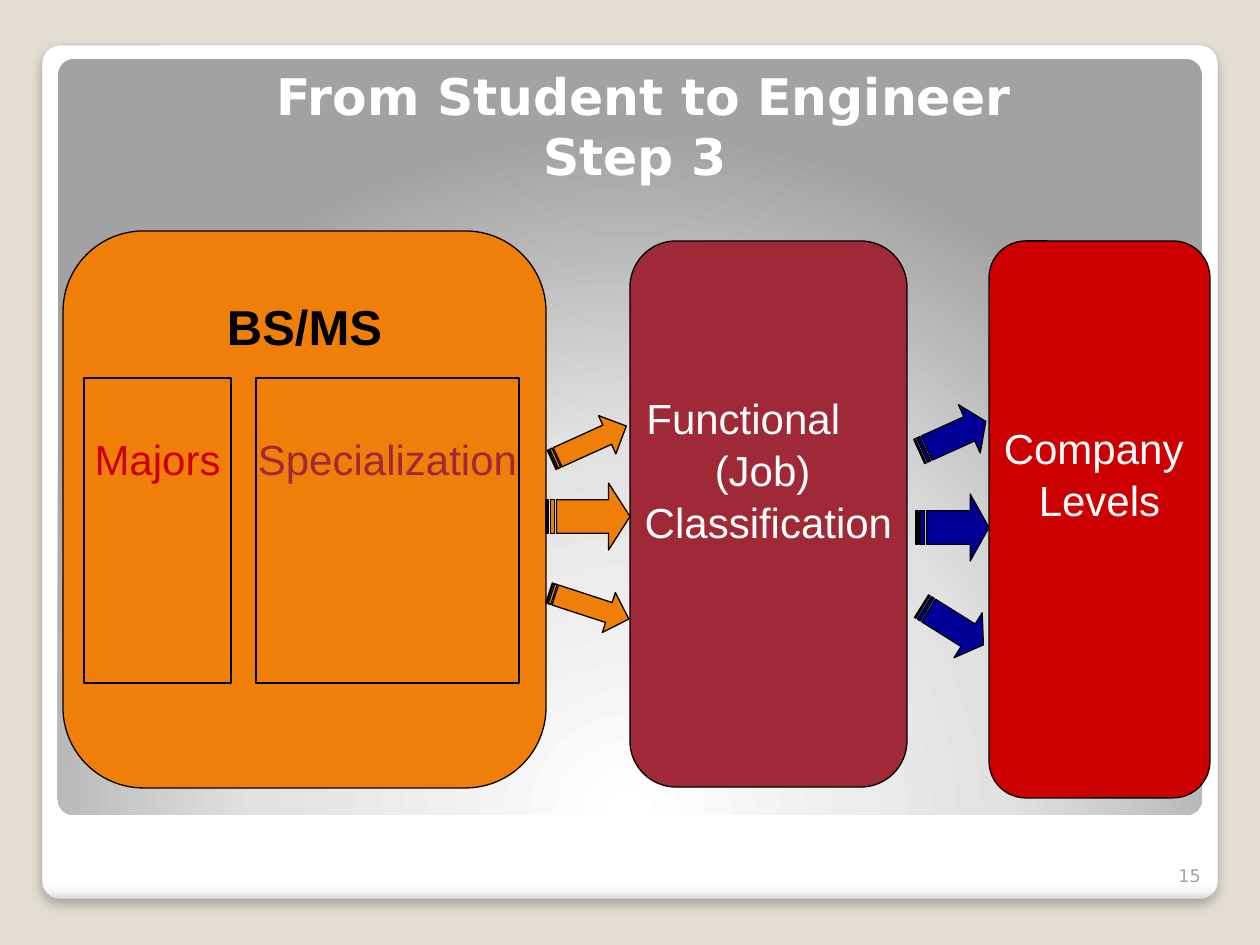
from pptx import Presentation
from pptx.dml.color import RGBColor
from pptx.enum.shapes import MSO_SHAPE as SHAPE
from pptx.enum.text import MSO_ANCHOR as ANCHOR, MSO_AUTO_SIZE as AUTO, PP_ALIGN as ALIGN
from pptx.oxml import parse_xml
from pptx.oxml.ns import nsdecls
from pptx.util import Emu, Pt

PX_PER_INCH = 126
COLORS = {
    "page": "E3DED1", "white": "FFFFFF", "black": "000000", "edge": "A4A4A4",
    "number": "A8A49B", "orange": "F07F09", "maroon": "9F2936",
    "red": "CC0000", "navy": "000099",
}


def px(n):
    return Emu(round(n * 914400 / PX_PER_INCH))


def rgb(name):
    return RGBColor.from_string(COLORS[name])


def add_box(slide, kind, box, fill, line="black", width=0.75):
    s = slide.shapes.add_shape(kind, *map(px, box))
    s.shadow.inherit = False
    s.fill.solid()
    s.fill.fore_color.rgb = rgb(fill)
    if line:
        s.line.color.rgb = rgb(line)
        s.line.width = Pt(width)
    else:
        s.line.fill.background()
    return s


def set_gradient(s, stops, direction):
    """Replace the solid fill; stops are (percent, hex) pairs, direction is XML."""
    gs = "".join(f'<a:gs pos="{pos * 1000}"><a:srgbClr val="{color}"/></a:gs>'
                 for pos, color in stops)
    solid = s._element.spPr.find("{*}solidFill")
    solid.getparent().replace(solid, parse_xml(
        f'<a:gradFill {nsdecls("a")} rotWithShape="1">'
        f'<a:gsLst>{gs}</a:gsLst>{direction}</a:gradFill>'))


def set_text(s, lines, color, size, top, bold=False):
    """Centred lines, starting top px below the upper edge of the text area."""
    tf = s.text_frame
    tf.word_wrap = False
    tf.vertical_anchor = ANCHOR.TOP
    tf.margin_left = tf.margin_right = tf.margin_bottom = 0
    tf.margin_top = px(top)
    for i, line in enumerate(lines):
        p = tf.add_paragraph() if i else tf.paragraphs[0]
        p.text = line
        p.alignment = ALIGN.CENTER
        p.space_after = Pt(1)
        p.font.name, p.font.size, p.font.bold = "Arial", Pt(size), bold
        p.font.color.rgb = rgb(color)


def add_panels(slide, box):
    x, y, w, h = box
    card = add_box(slide, SHAPE.ROUNDED_RECTANGLE, box, "white", "edge", 0.16)
    set_gradient(card, [(0, "FFFFFF"), (98, "FFFFFF"), (99, "F7F7F7"), (100, "DADADA")],
                 '<a:lin ang="5400000" scaled="0"/>')
    card._element.spPr.find("{*}effectLst").append(parse_xml(
        f'<a:outerShdw {nsdecls("a")} blurRad="76200" dist="50800" dir="5400000" '
        'algn="t" rotWithShape="0"><a:srgbClr val="000000"><a:alpha val="25000"/>'
        '</a:srgbClr></a:outerShdw>'))
    panel = add_box(slide, SHAPE.ROUNDED_RECTANGLE, (x + 16, y + 14, w - 32, h - 98),
                    "white", None)
    set_gradient(panel, [(0, "FFFFFF"), (55, "E1E1E1"), (100, "A2A2A2")],
                 '<a:path path="circle"><a:fillToRect l="50000" t="175000" '
                 'r="50000" b="-75000"/></a:path>')
    for s in (card, panel):
        s.adjustments[0] = 0.021


def place_title(slide, box):
    title = slide.shapes.title
    slide.shapes._spTree.append(title._element)  # in front of the panels
    title.left, title.top, title.width, title.height = map(px, box)
    tf = title.text_frame
    tf.text = " From Student to Engineer\vStep 3"
    tf.word_wrap = True
    tf.auto_size = AUTO.NONE
    tf.vertical_anchor = ANCHOR.BOTTOM
    tf.margin_top = tf.margin_bottom = 0
    p = tf.paragraphs[0]
    p.alignment = ALIGN.CENTER
    p.font.name, p.font.size, p.font.bold = "DejaVu Sans", Pt(28.8), True
    p.font.color.rgb = rgb("white")


def add_page_number(slide, box):
    tf = slide.shapes.add_textbox(*map(px, box)).text_frame
    tf.word_wrap = True
    tf.vertical_anchor = ANCHOR.BOTTOM
    p = tf.paragraphs[0]
    p.text = "15"
    p.alignment = ALIGN.RIGHT
    p.font.name, p.font.size = "DejaVu Sans", Pt(10)
    p.font.color.rgb = rgb("number")


def add_degree(slide, box):
    x, y, _, _ = box
    degree = add_box(slide, SHAPE.FLOWCHART_ALTERNATE_PROCESS, box, "orange")
    set_text(degree, ["BS/MS"], "black", 28, 42, bold=True)
    for dx, w, label, color in ((21, 147, "Majors", "red"),
                                (193, 263, "Specialization", "maroon")):
        s = add_box(slide, SHAPE.FLOWCHART_PROCESS, (x + dx, y + 147, w, 305), "orange")
        set_text(s, [label], color, 24, 56)


def add_job(slide, box):
    s = add_box(slide, SHAPE.FLOWCHART_ALTERNATE_PROCESS, box, "maroon")
    set_text(s, ["Functional", "(Job) ", "Classification"], "white", 24, 138)
    s.text_frame.word_wrap = True
    first = s.text_frame.paragraphs[0]
    first.alignment = ALIGN.LEFT
    first._p.get_or_add_pPr().set("marL", str(px(3)))


def add_company(slide, box):
    s = add_box(slide, SHAPE.FLOWCHART_ALTERNATE_PROCESS, box, "red")
    set_text(s, ["Company ", "Levels"], "white", 24, 171)


def add_arrows(slide, origin, color, arrows):
    """Each arrow is (dx, dy, width, height, rotation, head length / height)."""
    x, y = origin
    for dx, dy, w, h, angle, head in arrows:
        s = add_box(slide, SHAPE.STRIPED_RIGHT_ARROW, (x + dx, y + dy, w, h), color)
        s.adjustments[1] = head
        s.rotation = angle


def main():
    prs = Presentation()
    prs.slide_width, prs.slide_height = px(1260), px(945)
    slide = prs.slides.add_slide(prs.slide_layouts[5])
    slide.background.fill.solid()
    slide.background.fill.fore_color.rgb = rgb("page")

    add_panels(slide, (42, 45, 1176, 854))
    place_title(slide, (63, 113, 1144, 73))
    add_page_number(slide, (1150, 842, 63, 50))
    add_degree(slide, (63, 231, 483, 557))
    add_job(slide, (630, 241, 277, 546))
    add_company(slide, (989, 241, 221, 557))
    add_arrows(slide, (546, 422), "orange", [
        (2, 0, 82, 42, 335.6, 0.5), (0, 61, 84, 67, 0, 0.32), (1, 163, 84, 42, 18.1, 0.5)])
    add_arrows(slide, (916, 410), "navy", [
        (0, 0, 73, 53, 335.7, 0.34), (0, 84, 73, 67, 0, 0.28), (0, 189, 73, 53, 32.1, 0.34)])
    prs.save("out.pptx")


if __name__ == "__main__":
    main()
